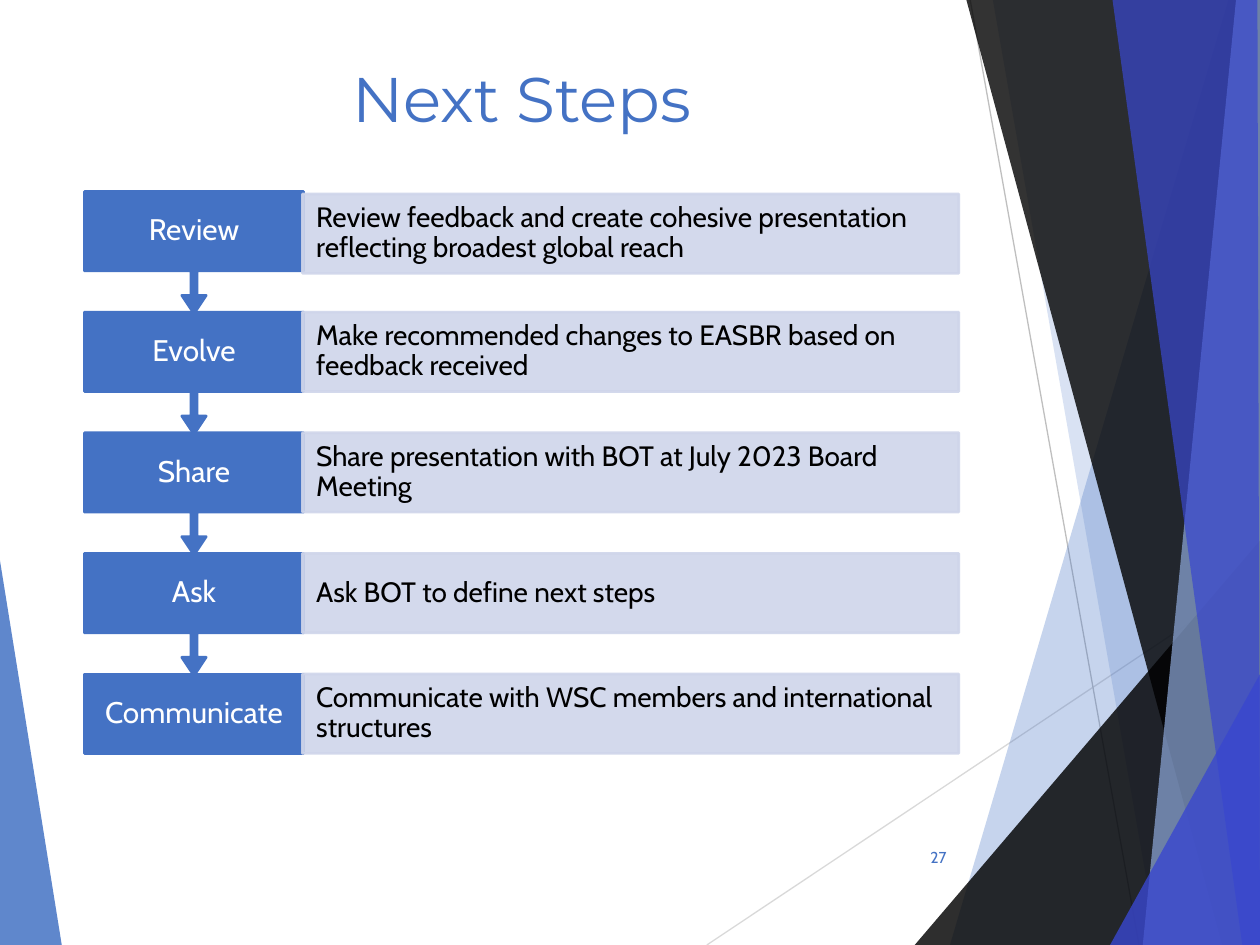
"""Build the Next Steps slide: five linked steps beside overlapping angular bands."""
import pptx
import pptx.dml.color
import pptx.enum.shapes
import pptx.enum.text
import pptx.oxml.ns
import pptx.util
from lxml import etree

Inches = pptx.util.Inches
Pt = pptx.util.Pt
RGBColor = pptx.dml.color.RGBColor
MSO_SHAPE = pptx.enum.shapes.MSO_SHAPE
PP_ALIGN = pptx.enum.text.PP_ALIGN
MSO_ANCHOR = pptx.enum.text.MSO_ANCHOR
qn = pptx.oxml.ns.qn

BLUE = RGBColor(0x44, 0x72, 0xC4)
SOFT_BLUE = RGBColor(0x8F, 0xAA, 0xDC)
INDIGO = RGBColor(0x39, 0x47, 0xCF)
PALE = RGBColor(0xCF, 0xD5, 0xEA)
BLACK = RGBColor(0x00, 0x00, 0x00)
WHITE = RGBColor(0xFF, 0xFF, 0xFF)
GREY = RGBColor(0xBF, 0xBF, 0xBF)
LIGHT_GREY = RGBColor(0xD9, 0xD9, 0xD9)


def paint(fill, color, opacity=100):
    fill.solid()
    fill.fore_color.rgb = color
    if opacity < 100:
        srgb = fill._xPr.find(qn("a:solidFill")).find(qn("a:srgbClr"))
        etree.SubElement(srgb, qn("a:alpha")).set("val", str(opacity * 1000))


def write(shape, text, size, color, align, anchor, font="Cabin", spacing=1.0, inset=0.1):
    tf = shape.text_frame
    tf.word_wrap = True
    tf.vertical_anchor = anchor
    tf.margin_left = tf.margin_right = Inches(inset)
    tf.margin_top = tf.margin_bottom = Inches(0.05)
    tf.text = text
    p = tf.paragraphs[0]
    p.alignment = align
    p.line_spacing = spacing
    r = p.runs[0]
    r.font.name = font
    r.font.size = Pt(size)
    r.font.color.rgb = color


prs = pptx.Presentation()
prs.slide_width = Inches(10)
prs.slide_height = Inches(7.5)
s = prs.slides.add_slide(prs.slide_layouts[6])

rays = [
    ((5.61, 7.5), (10, 4.57), LIGHT_GREY),
    ((7.7, 0), (9.04, 7.5), GREY),
]
bands = [
    ([(0, 4.45), (0.49, 7.5), (0, 7.5)], BLUE, 85),
    ([(9.75, 0), (7.54, 7.5), (10, 7.5), (10, 0)], BLUE, 30),
    ([(7.88, 0), (9.19, 7.5), (10, 7.5), (10, 0)], BLUE, 20),
    ([(7.26, 7.5), (10, 4.29), (10, 7.5)], BLACK, 82),
    ([(7.67, 0), (9.7, 7.5), (10, 7.5), (10, 0)], BLACK, 80),
    ([(9.81, 0), (9.07, 7.5), (10, 7.5), (10, 0)], SOFT_BLUE, 70),
    ([(8.83, 0), (9.86, 7.5), (10, 7.5), (9.98, 0)], INDIGO, 70),
    ([(8.81, 7.5), (10, 5.35), (10, 7.5)], INDIGO, 80),
]
for start, end, color in rays:
    line = s.shapes.add_connector(
        pptx.enum.shapes.MSO_CONNECTOR.STRAIGHT, *map(Inches, start + end))
    line.line.color.rgb = color
    line.line.width = Pt(0.75)
    etree.SubElement(line._element.spPr, qn("a:effectLst"))

for points, color, opacity in bands:
    corners = [(Inches(x), Inches(y)) for x, y in points]
    builder = s.shapes.build_freeform(*corners[0])
    builder.add_line_segments(corners[1:], close=True)
    band = builder.convert_to_shape()
    band.shadow.inherit = False
    band.line.fill.background()
    paint(band.fill, color, opacity)

title = s.shapes.add_textbox(Inches(0.67), Inches(0.42), Inches(6.94), Inches(1.44))
write(title, "Next Steps", 36, BLUE, PP_ALIGN.CENTER, MSO_ANCHOR.TOP, font="Montserrat")
number = s.shapes.add_textbox(Inches(7.05), Inches(6.6), Inches(0.56), Inches(0.4))
write(number, "27", 9, BLUE, PP_ALIGN.RIGHT, MSO_ANCHOR.MIDDLE)

steps = [
    ("Review", "Review feedback and create cohesive presentation reflecting broadest global reach"),
    ("Evolve", "Make recommended changes to EASBR based on feedback received"),
    ("Share", "Share presentation with BOT at July 2023 Board Meeting"),
    ("Ask", "Ask BOT to define next steps"),
    ("Communicate", "Communicate with WSC members and international structures"),
]
first_top, last_top = 1.52, 5.35
last = len(steps) - 1
pitch = (last_top - first_top) / last
for i, (name, detail) in reversed(list(enumerate(steps))):
    top = first_top + i * pitch
    kind, height = MSO_SHAPE.DOWN_ARROW_CALLOUT, 0.97
    if i == last:
        kind, height = MSO_SHAPE.RECTANGLE, 0.63
    step = s.shapes.add_shape(kind, Inches(0.67), Inches(top), Inches(1.74), Inches(height))
    if i < last:
        for n, value in enumerate((0.05, 0.1, 0.15, 0.65)):
            step.adjustments[n] = value
    detail_top = top if i else 1.54
    box = s.shapes.add_shape(
        MSO_SHAPE.RECTANGLE, Inches(2.4), Inches(detail_top), Inches(5.21), Inches(0.63))
    for shape, color, opacity in ((step, BLUE, 100), (box, PALE, 90)):
        shape.shadow.inherit = False
        paint(shape.fill, color, opacity)
        paint(shape.line.fill, color, opacity)
        shape.line.width = Pt(1.5)
    write(step, name, 17, WHITE, PP_ALIGN.CENTER, MSO_ANCHOR.MIDDLE, spacing=0.9, inset=0.12)
    write(box, detail, 16, BLACK, PP_ALIGN.LEFT, MSO_ANCHOR.MIDDLE, spacing=0.9, inset=0.11)

prs.save("out.pptx")
